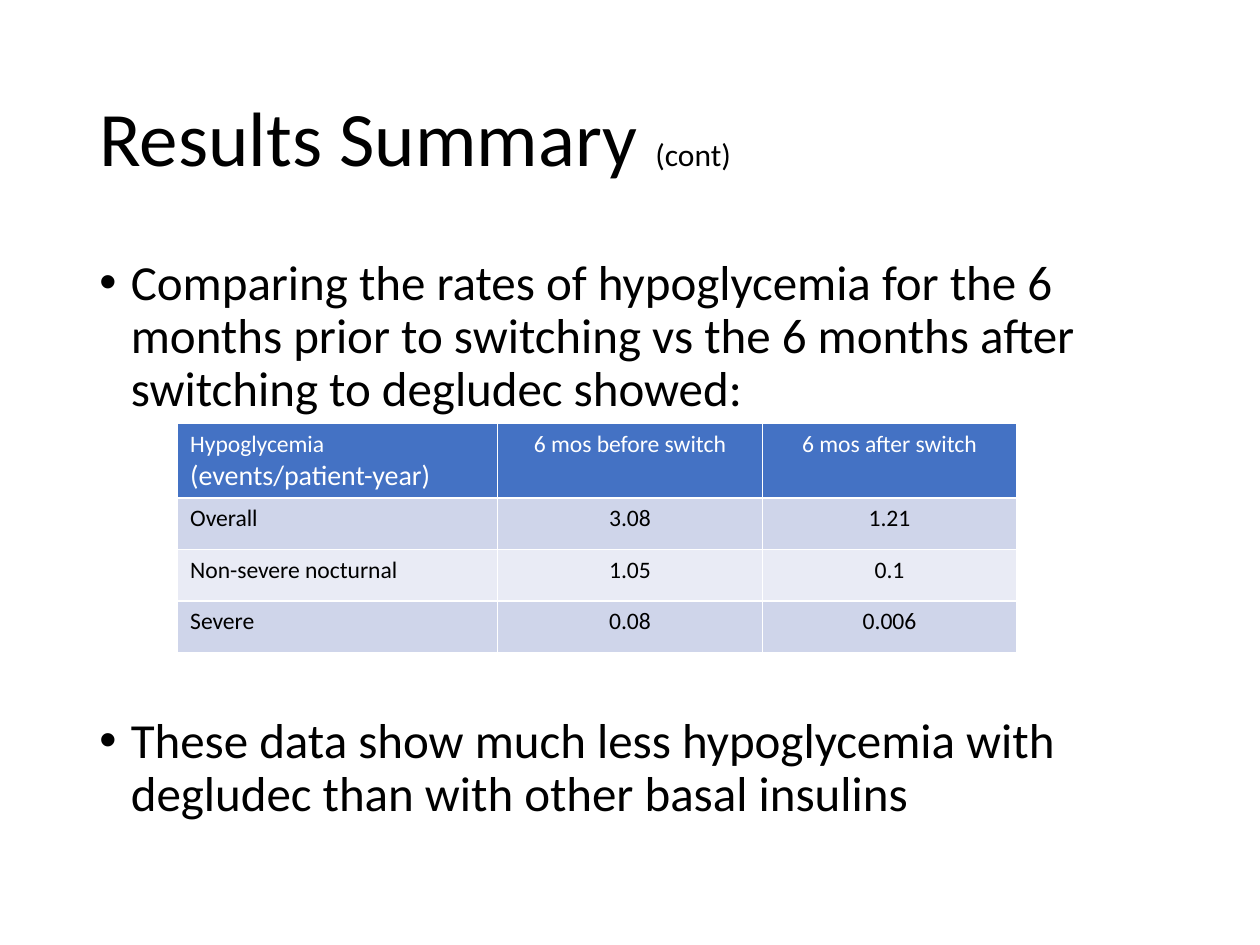
"""Build the results summary slide with its hypoglycemia table."""
from dataclasses import dataclass

from lxml import etree
from pptx import Presentation
from pptx import util as u
from pptx.dml.color import RGBColor
from pptx.enum import text
from pptx.oxml.ns import qn


@dataclass(frozen=True)
class Theme:
    font: str = "Calibri"
    ink: str = "000000"
    white: str = "FFFFFF"
    header: str = "4472C4"
    bands: tuple = ("CFD5EA", "E9EBF5")
    title: float = 44
    note: float = 18
    body: float = 28
    unit: float = 16
    cell: float = 13.5
    border: float = 1


@dataclass(frozen=True)
class Run:
    text: str
    size: float


@dataclass(frozen=True)
class Row:
    label: str
    before: str
    after: str


T = Theme()
ROWS = [
    Row("Overall", "3.08", "1.21"),
    Row("Non-severe nocturnal", "1.05", "0.1"),
    Row("Severe", "0.08", "0.006"),
]
COLUMN_WIDTHS = (2.54, 2.1, 2.02)
ROW_HEIGHTS = (0.59, 0.41, 0.41, 0.41)
BULLET_GAP = 171


def add_text(tf, runs: list[Run], *, first: bool = True, color: str = T.ink,
             align=text.PP_ALIGN.LEFT, spacing: float = 1.0,
             before: float = 0, bullet: bool = False) -> None:
    p = tf.paragraphs[0] if first else tf.add_paragraph()
    p.alignment, p.line_spacing, p.space_before = align, spacing, u.Pt(before)
    if bullet:
        pPr = p._p.get_or_add_pPr()
        pPr.set("marL", str(u.Inches(0.25)))
        pPr.set("indent", str(u.Inches(-0.25)))
        etree.SubElement(pPr, qn("a:buFont")).set("typeface", "Arial")
        etree.SubElement(pPr, qn("a:buChar")).set("char", "•")
    for run in runs:
        r = p.add_run()
        r.text = run.text
        r.font.name, r.font.size, r.font.bold = T.font, u.Pt(run.size), False
        r.font.color.rgb = RGBColor.from_string(color)


def add_box(s, top: float, height: float, anchor):
    sp = s.shapes.add_textbox(u.Inches(0.69), u.Inches(top), u.Inches(8.62), u.Inches(height))
    tf = sp.text_frame
    tf.word_wrap, tf.vertical_anchor = True, anchor
    return tf


def style_cell(cell, fill: str) -> None:
    tcPr = cell._tc.get_or_add_tcPr()
    for side in ("lnL", "lnR", "lnT", "lnB"):
        ln = etree.SubElement(tcPr, qn(f"a:{side}"), w=str(u.Pt(T.border)))
        color = etree.SubElement(etree.SubElement(ln, qn("a:solidFill")), qn("a:srgbClr"))
        color.set("val", T.white)
    cell.fill.solid()
    cell.fill.fore_color.rgb = RGBColor.from_string(fill)


def add_results(s, rows: list[Row]) -> None:
    header = Row("Hypoglycemia", "6 mos before switch", "6 mos after switch")
    table = s.shapes.add_table(
        len(rows) + 1, len(COLUMN_WIDTHS), u.Inches(1.41), u.Inches(3.36),
        u.Inches(sum(COLUMN_WIDTHS)), u.Inches(sum(ROW_HEIGHTS))).table
    for column, width in zip(table.columns, COLUMN_WIDTHS):
        column.width = u.Inches(width)
    for i, row in enumerate([header, *rows]):
        table.rows[i].height = u.Inches(ROW_HEIGHTS[i])
        fill, color = (T.bands[(i - 1) % 2], T.ink) if i else (T.header, T.white)
        for j, value in enumerate((row.label, row.before, row.after)):
            cell = table.cell(i, j)
            style_cell(cell, fill)
            align = text.PP_ALIGN.CENTER if j else text.PP_ALIGN.LEFT
            add_text(cell.text_frame, [Run(value, T.cell)], color=color, align=align)
    add_text(table.cell(0, 0).text_frame, [Run("(events/patient-year)", T.unit)],
             first=False, color=T.white)


def main() -> None:
    prs = Presentation()
    prs.slide_width, prs.slide_height = u.Inches(10), u.Inches(7.5)
    s = prs.slides.add_slide(prs.slide_layouts[6])
    title = add_box(s, 0.4, 1.45, text.MSO_ANCHOR.MIDDLE)
    add_text(title, [Run("Results Summary ", T.title), Run("(cont)", T.note)], spacing=0.9)
    body = add_box(s, 2, 4.76, text.MSO_ANCHOR.TOP)
    add_text(body, [Run("Comparing the rates of hypoglycemia for the 6 months prior to switching "
                        "vs the 6 months after switching to degludec showed:", T.body)],
             spacing=0.9, bullet=True)
    add_text(body, [Run("These data show much less hypoglycemia with degludec than with "
                        "other basal insulins", T.body)],
             first=False, spacing=0.9, before=BULLET_GAP, bullet=True)
    add_results(s, ROWS)
    prs.save("out.pptx")


if __name__ == "__main__":
    main()
